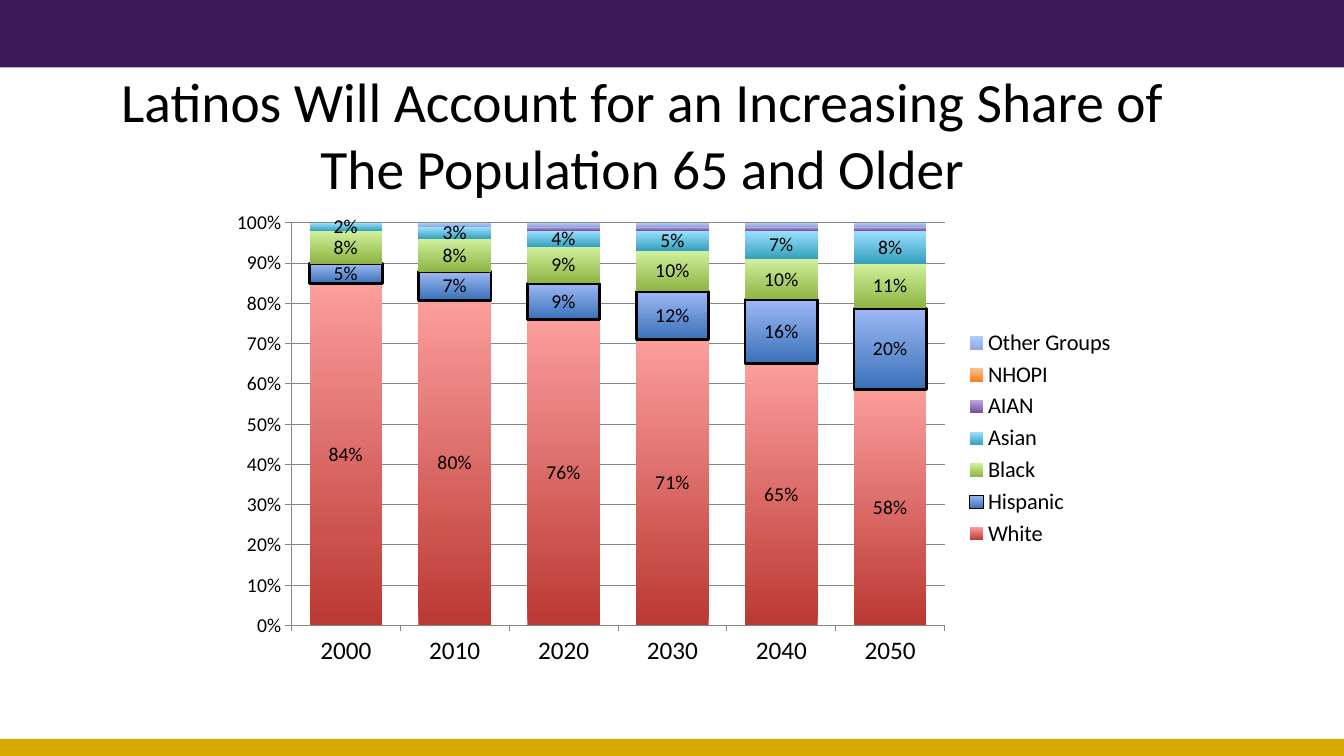
"""Build a slide charting the population aged 65 and older by group."""
from lxml import etree
from pptx import Presentation
from pptx import util as u
from pptx.chart import data
from pptx.dml import color
from pptx.enum import chart as charts, shapes, text
from pptx.oxml import ns


def rgb(value):
    return color.RGBColor.from_string(value)


presentation = Presentation()
presentation.slide_width = u.Inches(13.33)
presentation.slide_height = u.Inches(7.5)
slide = presentation.slides.add_slide(presentation.slide_layouts[5])

for top, height, fill in ((0, 0.67, "3B185A"), (7.33, 0.17, "D7A900")):
    band = slide.shapes.add_shape(
        shapes.MSO_SHAPE.RECTANGLE, 0, u.Inches(top), u.Inches(13.33), u.Inches(height))
    band.shadow.inherit = False
    band.fill.solid()
    band.fill.fore_color.rgb = rgb(fill)
    band.line.fill.background()

title = slide.shapes.title
title.left, title.top = u.Inches(0.83), u.Inches(0.83)
title.width, title.height = u.Inches(11.08), u.Inches(1)
title.text_frame.text = "Latinos Will Account for an Increasing Share of The Population 65 and Older"
title.text_frame.word_wrap = True
title.text_frame.auto_size = text.MSO_AUTO_SIZE.NONE
title.text_frame.vertical_anchor = text.MSO_ANCHOR.MIDDLE
paragraph = title.text_frame.paragraphs[0]
paragraph.alignment = text.PP_ALIGN.CENTER
paragraph.font.name = "Calibri"
paragraph.font.size = u.Pt(39.6)
paragraph.font.color.rgb = rgb("000000")

groups = (
    ("White", (0.84, 0.8, 0.76, 0.71, 0.65, 0.58), "BB3833", "FB9E9C"),
    ("Hispanic", (0.05, 0.07, 0.09, 0.12, 0.16, 0.2), "3A70B8", "9DBAF5"),
    ("Black", (0.08, 0.08, 0.09, 0.1, 0.1, 0.11), "8FB444", "D0F09C"),
    ("Asian", (0.02, 0.03, 0.04, 0.05, 0.07, 0.08), "34A0BD", "9BE0FF"),
    ("AIAN", (0, 0, 0.01, 0.01, 0.01, 0.01), "704E9C", "C0A6E0"),
    ("NHOPI", (0, 0, 0, 0, 0, 0), "F68222", "FFC08F"),
    ("Other Groups", (0, 0.01, 0.01, 0.01, 0.01, 0.01), "8FA9DD", "B0CBFF"),
)
labelled = ("White", "Hispanic", "Black", "Asian")
chart_data = data.CategoryChartData(number_format="0%")
chart_data.categories = [str(year) for year in range(2000, 2051, 10)]
for name, values, bottom_color, top_color in groups:
    chart_data.add_series(name, values)

chart = slide.shapes.add_chart(
    charts.XL_CHART_TYPE.COLUMN_STACKED_100, u.Inches(2.17), u.Inches(2),
    u.Inches(9), u.Inches(4.7), chart_data).chart
chart.has_title = False
chart.font.name = "Calibri"
chart.font.size = u.Pt(18)
chart.font.color.rgb = rgb("000000")
chart.has_legend = True
chart.legend.position = charts.XL_LEGEND_POSITION.RIGHT
chart.legend.include_in_layout = False
chart.legend.font.size = u.Pt(16)

value_axis = chart.value_axis
value_axis.minimum_scale, value_axis.maximum_scale = 0, 1
value_axis.major_unit = 0.1
value_axis.has_major_gridlines = True
value_axis.tick_labels.font.size = u.Pt(14)
value_axis.tick_labels.number_format = "0%"
value_axis.tick_labels.number_format_is_linked = False
for axis in (chart.category_axis, value_axis):
    axis.major_tick_mark = charts.XL_TICK_MARK.OUTSIDE
    axis.format.line.color.rgb = rgb("868686")
value_axis.major_gridlines.format.line.color.rgb = rgb("868686")

plot = chart.plots[0]
plot.gap_width = 50
plot.overlap = 100
plot.vary_by_categories = False
for series, (name, values, *stop_colors) in zip(plot.series, groups):
    fill = series.format.fill
    fill.gradient()
    fill.gradient_angle = 90
    for stop, stop_color in zip(fill.gradient_stops, stop_colors):
        stop.color.rgb = rgb(stop_color)
    if name == "Hispanic":
        series.format.line.color.rgb = rgb("000000")
        series.format.line.width = u.Pt(2)
    if name in labelled:
        labels = series.data_labels
        labels.show_value = True
        labels.number_format = "0%"
        labels.number_format_is_linked = False
        labels.position = charts.XL_LABEL_POSITION.CENTER
        labels.font.size = u.Pt(14)

plot_area = chart.element.find(".//" + ns.qn("c:plotArea"))
layout = plot_area.find(ns.qn("c:layout"))
if layout is None:
    layout = etree.Element(ns.qn("c:layout"))
    plot_area.insert(0, layout)
manual = etree.SubElement(layout, ns.qn("c:manualLayout"))
for tag, value in (("layoutTarget", "inner"), ("xMode", "edge"), ("yMode", "edge"),
                   ("x", "0.08"), ("y", "0.045"), ("w", "0.72"), ("h", "0.85")):
    etree.SubElement(manual, ns.qn("c:" + tag)).set("val", value)

presentation.save("out.pptx")
